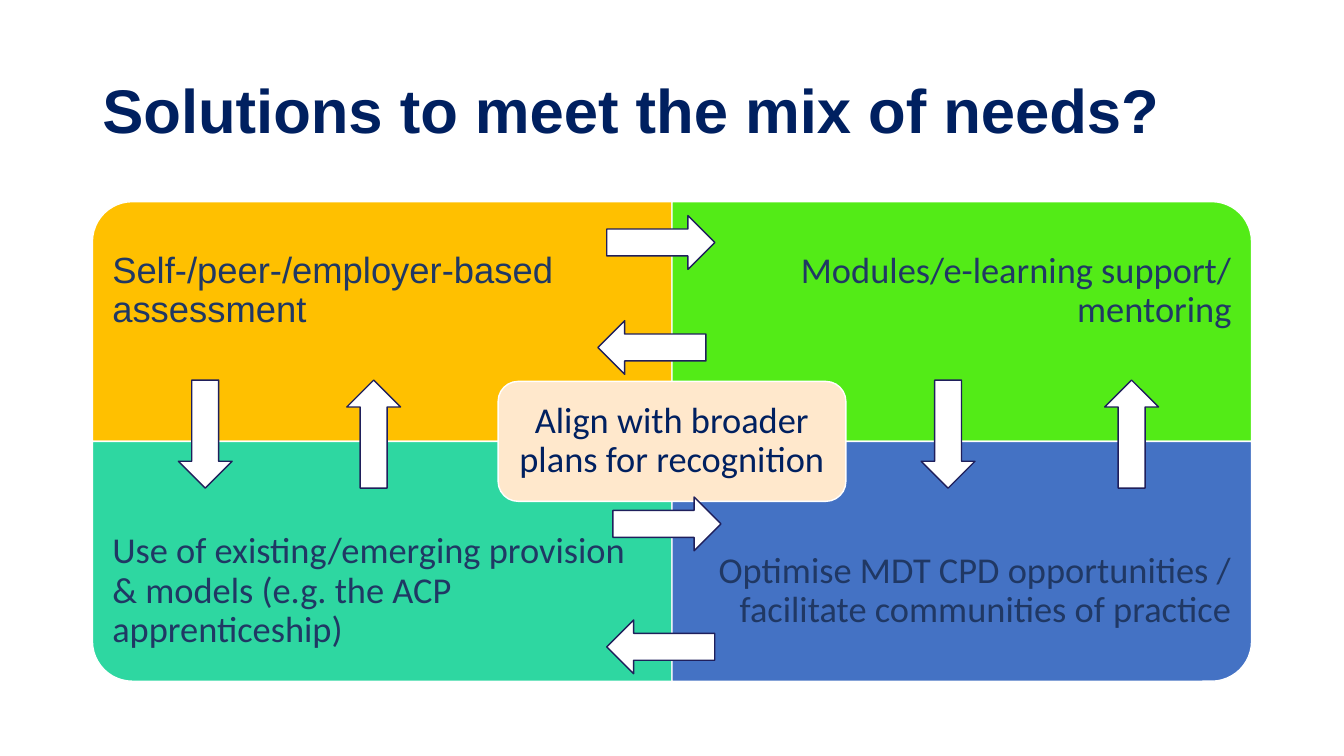
from pptx import Presentation
from pptx.dml.color import RGBColor
from pptx.enum.shapes import MSO_SHAPE
from pptx.enum.text import MSO_ANCHOR, PP_ALIGN
from pptx.util import Pt

ROUND_ONE, ROUND_ALL = MSO_SHAPE.ROUND_1_RECTANGLE, MSO_SHAPE.ROUNDED_RECTANGLE
UP, DOWN = MSO_SHAPE.UP_ARROW, MSO_SHAPE.DOWN_ARROW
LEFT_ARROW, RIGHT_ARROW = MSO_SHAPE.LEFT_ARROW, MSO_SHAPE.RIGHT_ARROW
LEFT, CENTER, RIGHT = PP_ALIGN.LEFT, PP_ALIGN.CENTER, PP_ALIGN.RIGHT
MIDDLE = MSO_ANCHOR.MIDDLE

NAVY, SLATE, WHITE, OUTLINE = "002060", "203864", "FFFFFF", "1F1F5B"

# text, font, fill, rotation, alignment; row by row
QUADRANTS = [
    ("Self-/peer-/employer-based assessment", "Arial", "FFC000", 270, LEFT),
    ("Modules/e-learning support/ mentoring", "Calibri", "53EB17", 0, RIGHT),
    ("Use of existing/emerging provision & models (e.g. the ACP apprenticeship)",
     "Calibri", "2ED7A1", 180, LEFT),
    ("Optimise MDT CPD opportunities / facilitate communities of practice",
     "Calibri", "4472C4", 90, RIGHT),
]

# arrow kind, left and top from the matrix corner
ARROWS = [
    (DOWN, 61.4, 127.5), (DOWN, 592, 127.5),
    (UP, 181.7, 127.5), (UP, 723.1, 127.5),
    (RIGHT_ARROW, 367.4, 10), (LEFT_ARROW, 367.4, 298.8),
    (LEFT_ARROW, 361, 85), (RIGHT_ARROW, 371.8, 211),
]
ARROW_LENGTH, ARROW_WIDTH = 77.2, 38.4


def rgb(value):
    return RGBColor.from_string(value)


def add_block(s, kind, x, y, w, h, fill, line, rotation=0):
    sp = s.shapes.add_shape(kind, Pt(x), Pt(y), Pt(w), Pt(h))
    sp.rotation = rotation
    sp.shadow.inherit = False
    sp.fill.solid()
    sp.fill.fore_color.rgb = rgb(fill)
    sp.line.color.rgb = rgb(line)
    sp.line.width = Pt(1)


def write_text(tf, text, font, size, color, align, inset, bold=False):
    tf.word_wrap = True
    tf.vertical_anchor = MIDDLE
    for side, margin in inset.items():
        setattr(tf, f"margin_{side}", Pt(margin))
    p = tf.paragraphs[0]
    p.alignment, p.line_spacing = align, 0.9
    r = p.add_run()
    r.text = text
    for name, value in {"name": font, "size": Pt(size), "bold": bold}.items():
        setattr(r.font, name, value)
    r.font.color.rgb = rgb(color)


def add_label(s, x, y, w, h, text, font, color, align, margin):
    tf = s.shapes.add_textbox(Pt(x), Pt(y), Pt(w), Pt(h)).text_frame
    inset = dict.fromkeys(("left", "top", "right", "bottom"), margin)
    write_text(tf, text, font, 26, color, align, inset)


def add_title(s, x, y, w, h, text):
    sp = s.shapes.title
    for name, value in {"left": x, "top": y, "width": w, "height": h}.items():
        setattr(sp, name, Pt(value))
    inset = {"left": 7.2, "top": 3.6, "right": 7.2, "bottom": 3.6}
    write_text(sp.text_frame, text, "Arial", 44, NAVY, LEFT, inset, bold=True)


def add_matrix(s, x, y, w, h):
    """Four quadrants, each rounded at its outer corner, around a centre label."""
    cell_w, cell_h = w / 2, h / 2
    label_h = cell_h * 0.75
    for i, (text, font, fill, rotation, align) in enumerate(QUADRANTS):
        row, col = divmod(i, 2)
        left, top = x + col * cell_w, y + row * cell_h
        # A quarter turn swaps width and height about the same centre
        bw, bh = (cell_h, cell_w) if rotation % 180 else (cell_w, cell_h)
        add_block(s, ROUND_ONE, left + (cell_w - bw) / 2, top + (cell_h - bh) / 2,
                  bw, bh, fill, WHITE, rotation)
        add_label(s, left, top + row * (cell_h - label_h), cell_w, label_h,
                  text, font, SLATE, align, 14.2)

    core_w, core_h, pad = cell_w * 0.6, cell_h / 2, 4.2
    left, top = x + (w - core_w) / 2, y + (h - core_h) / 2
    add_block(s, ROUND_ALL, left, top, core_w, core_h, "FFE8CC", WHITE)
    add_label(s, left + pad, top + pad, core_w - 2 * pad, core_h - 2 * pad,
              "Align with broader plans for recognition", "Calibri", NAVY, CENTER, 7.8)


def add_arrows(s, x, y):
    for kind, dx, dy in ARROWS:
        w, h = ARROW_LENGTH, ARROW_WIDTH
        if kind in (UP, DOWN):
            w, h = h, w
        add_block(s, kind, x + dx, y + dy, w, h, WHITE, OUTLINE)


def main():
    prs = Presentation()
    prs.slide_width, prs.slide_height = Pt(960), Pt(540)
    s = prs.slides.add_slide(prs.slide_layouts[5])
    add_title(s, 66, 28.75, 828, 104.4, "Solutions to meet the mix of needs?")
    add_matrix(s, 66, 144, 828, 342.6)
    add_arrows(s, 66, 144)
    prs.save("out.pptx")


if __name__ == "__main__":
    main()
